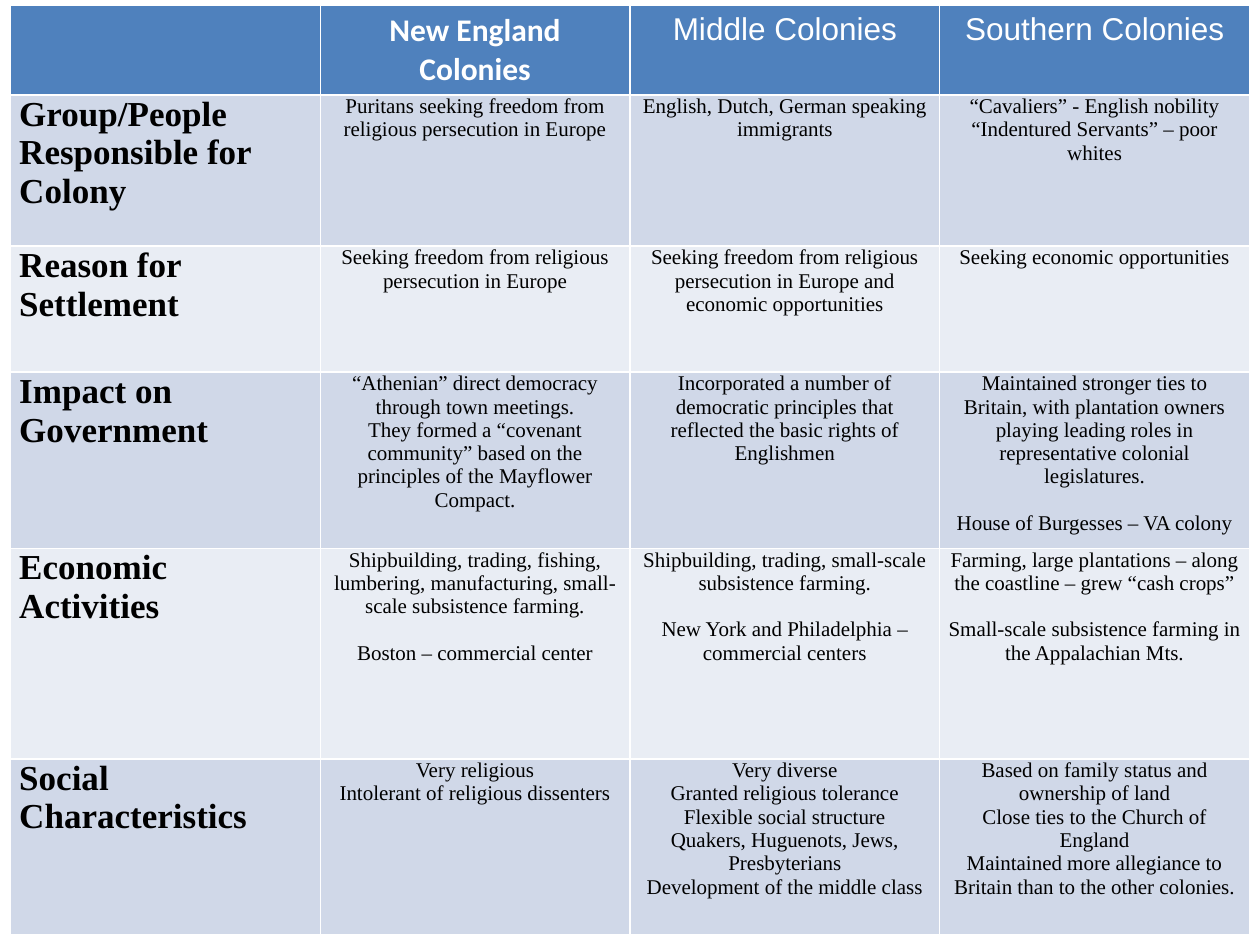
from lxml.etree import SubElement
from pptx import Presentation
from pptx.dml.color import RGBColor
from pptx.enum.text import PP_ALIGN as Align
from pptx.oxml.ns import qn
from pptx.util import Pt

HEADERS = ["", "New England Colonies", "Middle Colonies", "Southern Colonies"]
TOPICS = [
    ["Group/People Responsible for Colony",
     "Puritans seeking freedom from religious persecution in Europe",
     "English, Dutch, German speaking immigrants",
     "“Cavaliers” - English nobility\n“Indentured Servants” – poor whites"],
    ["Reason for Settlement",
     "Seeking freedom from religious persecution in Europe",
     "Seeking freedom from religious persecution in Europe and economic opportunities",
     "Seeking economic opportunities"],
    ["Impact on Government",
     "“Athenian” direct democracy through town meetings.\n"
     "They formed a “covenant community” based on the principles of the Mayflower Compact.",
     "Incorporated a number of democratic principles that reflected the basic rights of Englishmen",
     "Maintained stronger ties to Britain, with plantation owners playing leading roles in "
     "representative colonial legislatures.\n\nHouse of Burgesses – VA colony"],
    ["Economic Activities",
     "Shipbuilding, trading, fishing, lumbering, manufacturing, small-scale subsistence farming."
     "\n\nBoston – commercial center",
     "Shipbuilding, trading, small-scale subsistence farming."
     "\n\nNew York and Philadelphia – commercial centers",
     "Farming, large plantations – along the coastline – grew “cash crops”"
     "\n\nSmall-scale subsistence farming in the Appalachian Mts."],
    ["Social Characteristics",
     "Very religious\nIntolerant of religious dissenters",
     "Very diverse\nGranted religious tolerance\nFlexible social structure\n"
     "Quakers, Huguenots, Jews, Presbyterians\nDevelopment of the middle class",
     "Based on family status and ownership of land\nClose ties to the Church of England\n"
     "Maintained more allegiance to Britain than to the other colonies."],
]
ROW_HEIGHTS = [50.4, 86.4, 72, 100.8, 120.24, 100.8]
COLUMN_WIDTH = 177


def color(value):
    return RGBColor.from_string(value)


def write(frame, text, font="Times New Roman", size=12, bold=False,
          ink="000000", align=Align.CENTER, gap=13.3):
    first = True
    for block_index, block in enumerate(text.split("\n\n")):
        for line_index, line in enumerate(block.split("\n")):
            paragraph = frame.paragraphs[0] if first else frame.add_paragraph()
            first = False
            paragraph.alignment = align
            if block_index and not line_index:
                paragraph.space_before = Pt(gap)
            if line:
                run = paragraph.add_run()
                run.text = line
                run.font.name = font
                run.font.size = Pt(size)
                run.font.bold = bold
                run.font.color.rgb = color(ink)


class ColonySlide:
    header_fill = "4F81BD"
    band_fills = ["D0D8E8", "E9EDF4"]
    white = "FFFFFF"

    def __init__(self, presentation):
        self.slide = presentation.slides.add_slide(presentation.slide_layouts[6])

    def table(self, left, top, column_width, row_heights, column_count):
        shape = self.slide.shapes.add_table(
            len(row_heights), column_count, Pt(left), Pt(top),
            Pt(column_width * column_count), Pt(sum(row_heights)))
        for column in shape.table.columns:
            column.width = Pt(column_width)
        for row, height in zip(shape.table.rows, row_heights):
            row.height = Pt(height)
        return shape.table

    def cell(self, cell, text, fill, inset_x=5, inset_y=0, **text_format):
        cell.margin_left = cell.margin_right = Pt(inset_x)
        cell.margin_top = cell.margin_bottom = Pt(inset_y)
        write(cell.text_frame, text, **text_format)
        self.borders(cell)
        cell.fill.solid()
        cell.fill.fore_color.rgb = color(fill)

    def borders(self, cell, width=1):
        properties = cell._tc.get_or_add_tcPr()
        for side in ("lnL", "lnR", "lnT", "lnB"):
            line = SubElement(properties, qn(f"a:{side}"), w=str(Pt(width)))
            fill = SubElement(line, qn("a:solidFill"))
            SubElement(fill, qn("a:srgbClr"), val=self.white)

    def header_row(self, table, headers):
        for index, text in enumerate(headers):
            named_first = index == 1
            self.cell(table.cell(0, index), text, self.header_fill,
                      inset_x=7.2, inset_y=3.6, size=18, ink=self.white,
                      font="Calibri" if named_first else "Arial", bold=named_first)

    def topic_row(self, table, row, texts):
        fill = self.band_fills[(row - 1) % 2]
        topic, *details = texts
        self.cell(table.cell(row, 0), topic, fill, size=20, bold=True, align=Align.LEFT)
        for column, text in enumerate(details, 1):
            self.cell(table.cell(row, column), text, fill)


def main():
    presentation = Presentation()
    presentation.slide_width = Pt(720)
    presentation.slide_height = Pt(540)
    page = ColonySlide(presentation)
    table = page.table(6, 3, COLUMN_WIDTH, ROW_HEIGHTS, len(HEADERS))
    page.header_row(table, HEADERS)
    for row, texts in enumerate(TOPICS, 1):
        page.topic_row(table, row, texts)
    presentation.save("out.pptx")


if __name__ == "__main__":
    main()
